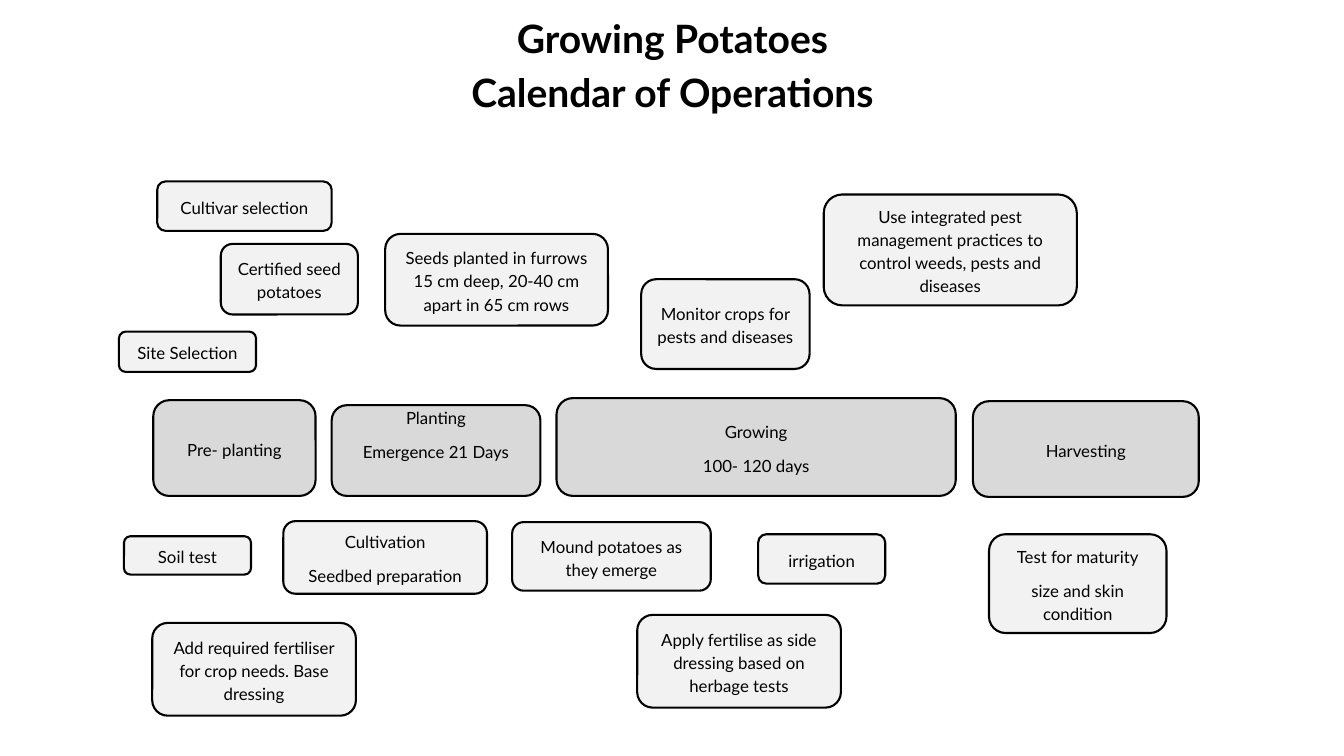
import pptx
import pptx.dml.color
import pptx.enum.shapes
import pptx.enum.text
import pptx.util

Inches = pptx.util.Inches
BLACK = "000000"
STAGE_FILL = "D9D9D9"
TASK_FILL = "F2F2F2"


def color(hex_string):
    return pptx.dml.color.RGBColor.from_string(hex_string)


def write_lines(text_frame, lines, size, space_after, bold=False):
    """Fill a frame with one centred paragraph for each line."""
    text_frame.word_wrap = True
    text_frame.text = "\n".join(lines)
    for paragraph in text_frame.paragraphs:
        paragraph.alignment = pptx.enum.text.PP_ALIGN.CENTER
        paragraph.line_spacing = 1.15
        paragraph.space_after = pptx.util.Pt(space_after)
        for run in paragraph.runs:
            run.font.name = "Lato"
            run.font.size = pptx.util.Pt(size)
            run.font.bold = bold
            run.font.color.rgb = color(BLACK)


presentation = pptx.Presentation()
presentation.slide_width = Inches(13.33)
presentation.slide_height = Inches(7.5)
slide = presentation.slides.add_slide(presentation.slide_layouts[6])

title = slide.shapes.add_textbox(Inches(0.92), Inches(0.07), Inches(11.5), Inches(1.08))
title.text_frame.margin_top = title.text_frame.margin_bottom = 0
write_lines(title.text_frame, ["Growing Potatoes", "Calendar of Operations"], 27.9, 0, bold=True)

# Each box: left, top, width, height, lines
stages = [
    (1.52, 3.97, 1.61, 0.95, ["Pre- planting"]),
    (3.29, 4.02, 2.07, 0.9, ["Planting", "Emergence 21 Days"]),
    (5.52, 3.95, 3.96, 0.97, ["Growing", "100- 120 days"]),
    (9.65, 3.98, 2.24, 0.95, ["Harvesting"]),
]
tasks = [
    (1.56, 1.8, 1.73, 0.49, ["Cultivar selection"]),
    (2.19, 2.42, 1.36, 0.7, ["Certified seed potatoes"]),
    (1.18, 3.29, 1.36, 0.4, ["Site Selection"]),
    (3.82, 2.32, 2.21, 0.91, ["Seeds planted in furrows 15 cm deep, 20-40 cm apart in 65 cm rows"]),
    (6.36, 2.77, 1.67, 0.89, ["Monitor crops for pests and diseases"]),
    (8.17, 1.93, 2.51, 1.1,
     ["Use integrated pest management practices to control weeds, pests and diseases"]),
    (1.23, 5.32, 1.26, 0.38, ["Soil test"]),
    (1.51, 6.18, 2.02, 0.92, ["Add required fertiliser for crop needs. Base dressing"]),
    (2.81, 5.17, 2.02, 0.72, ["Cultivation", "Seedbed preparation"]),
    (5.08, 5.18, 1.97, 0.68, ["Mound potatoes as they emerge"]),
    (6.32, 6.1, 2.02, 0.92, ["Apply fertilise as side dressing based on herbage tests"]),
    (7.52, 5.3, 1.26, 0.49, ["irrigation"]),
    (9.81, 5.3, 1.76, 0.98, ["Test for maturity", "size and skin condition"]),
]

for fill, boxes in ((STAGE_FILL, stages), (TASK_FILL, tasks)):
    for left, top, width, height, lines in boxes:
        box = slide.shapes.add_shape(
            pptx.enum.shapes.MSO_SHAPE.ROUNDED_RECTANGLE,
            Inches(left), Inches(top), Inches(width), Inches(height))
        box.shadow.inherit = False
        box.fill.solid()
        box.fill.fore_color.rgb = color(fill)
        box.line.color.rgb = color(BLACK)
        box.line.width = pptx.util.Pt(1.5)
        box.text_frame.vertical_anchor = pptx.enum.text.MSO_ANCHOR.MIDDLE
        write_lines(box.text_frame, lines, 12, 8)
        if lines[0] == "Planting":
            # The planting text sits in the upper part of its box
            box.text_frame.margin_top = 0
            box.text_frame.margin_bottom = Inches(0.34)

presentation.save("out.pptx")
